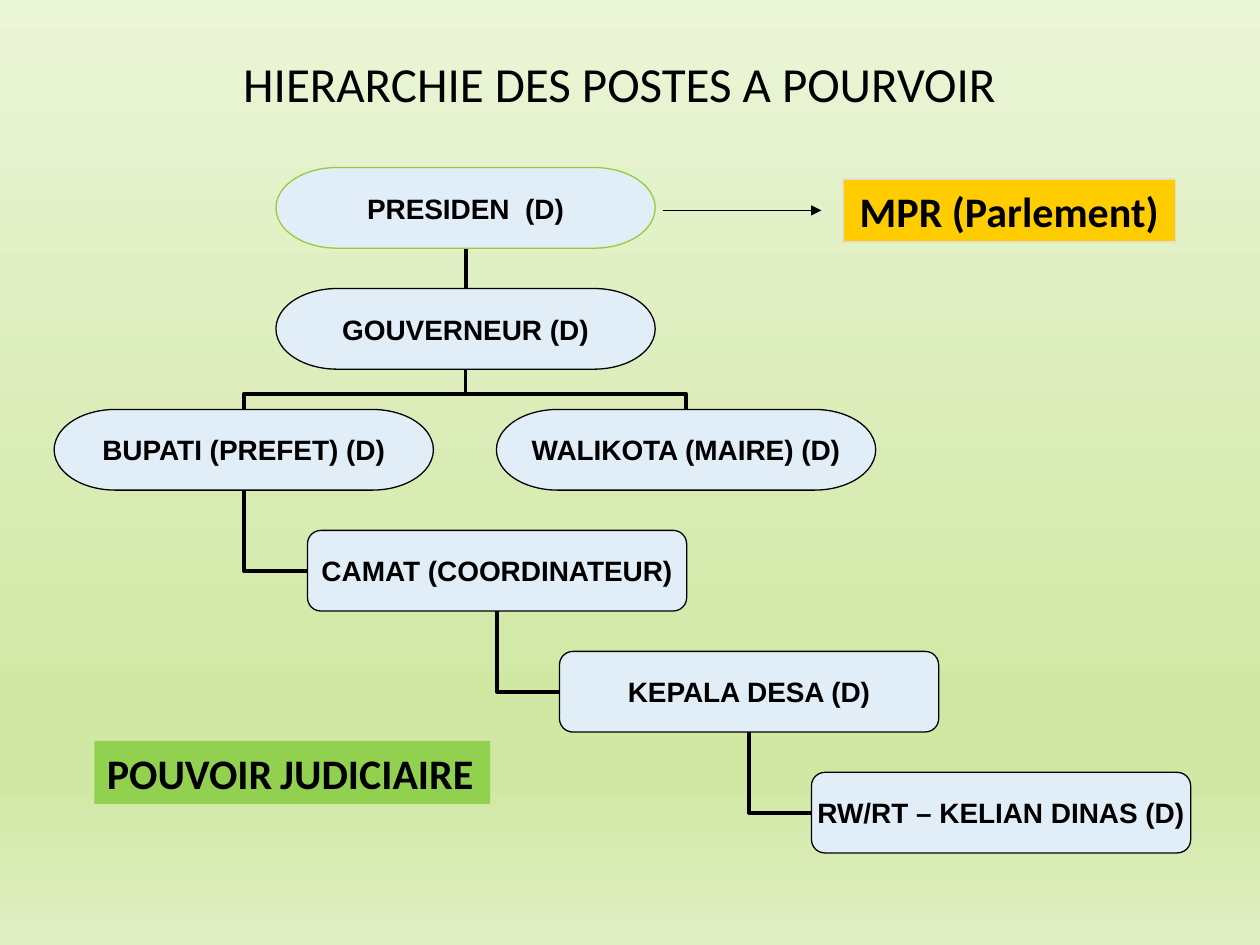
from copy import deepcopy

from pptx import Presentation
from pptx.dml.color import RGBColor
from pptx.enum.shapes import MSO_CONNECTOR, MSO_SHAPE
from pptx.enum.text import MSO_ANCHOR, MSO_AUTO_SIZE, PP_ALIGN
from pptx.oxml.ns import qn
from pptx.oxml.xmlchemy import OxmlElement
from pptx.util import Inches, Pt

STRAIGHT, ELBOW = MSO_CONNECTOR.STRAIGHT, MSO_CONNECTOR.ELBOW
OVAL, ROUNDED = MSO_SHAPE.FLOWCHART_TERMINATOR, MSO_SHAPE.ROUNDED_RECTANGLE
RECTANGLE = MSO_SHAPE.RECTANGLE
CENTER, LEFT = PP_ALIGN.CENTER, PP_ALIGN.LEFT
MIDDLE, TOP = MSO_ANCHOR.MIDDLE, MSO_ANCHOR.TOP
GROW = MSO_AUTO_SIZE.SHAPE_TO_FIT_TEXT

BLACK = "000000"
BOX_WIDTH, BOX_HEIGHT = 3.01, 0.64
FIRST_TOP, ROW_STEP = 1.33, 0.96


def write(shape, spans, font, bold, align, anchor):
    """Fill the first paragraph with (text, size) runs and return it."""
    frame = shape.text_frame
    frame.vertical_anchor = anchor
    para = frame.paragraphs[0]
    para.alignment = align
    for text, size in spans:
        span = para.add_run()
        span.text = text
        span.font.name = font
        span.font.size = Pt(size)
        span.font.bold = bold
        span.font.color.rgb = RGBColor.from_string(BLACK)
    return para


def draw_line(kind, start, end, width):
    """Add a black connector without shadow between two points in inches."""
    points = [Inches(value) for value in (*start, *end)]
    line = page.shapes.add_connector(kind, *points)
    line.line.color.rgb = RGBColor.from_string(BLACK)
    line.line.width = Pt(width)
    line.element.spPr.append(OxmlElement("a:effectLst"))
    return line


deck = Presentation()
deck.slide_width, deck.slide_height = Inches(10), Inches(7.5)
page = deck.slides.add_slide(deck.slide_layouts[6])

# Background gradient, from top to bottom
backdrop = page.background.fill
backdrop.gradient()
backdrop.gradient_angle = 270
stop_list = page.element.find(".//" + qn("a:gsLst"))
for stop in list(stop_list):
    stop_list.append(deepcopy(stop))
colors = [(0, "EBF5D7"), (0.74, "D1E8A5"), (0.83, "D1E8A5"), (1, "E0EFC3")]
for stop, (position, color) in zip(backdrop.gradient_stops, colors):
    stop.position = position
    stop.color.rgb = RGBColor.from_string(color)

# Title
title = page.shapes.add_textbox(Inches(0.5), Inches(0.3), Inches(8.83), Inches(0.77))
title.text_frame.word_wrap = True
para = write(title, [("HIERARCHIE DES POSTES A POURVOIR", 28)], "Calibri", False, CENTER, MIDDLE)
para.line_spacing = 0.9

# Parliament and judiciary labels
labels = [
    (6.69, 1.42, 2.64, "FFCC00", "E2DFCC", CENTER, True, [("MPR (Parlement)", 24)]),
    (0.75, 5.88, 3.14, "92D050", None, LEFT, False,
     [("POUVOIR", 24), (" ", 20), ("JUDICIAIRE", 24)]),
]
for left, top, width, fill, outline, align, wrap, spans in labels:
    label = page.shapes.add_shape(
        RECTANGLE, Inches(left), Inches(top), Inches(width), Inches(0.5))
    label.shadow.inherit = False
    label.fill.solid()
    label.fill.fore_color.rgb = RGBColor.from_string(fill)
    if outline:
        label.line.color.rgb = RGBColor.from_string(outline)
        label.line.width = Pt(1)
    else:
        label.line.fill.background()
    label.text_frame.word_wrap = wrap
    label.text_frame.auto_size = GROW
    write(label, spans, "Calibri", True, align, TOP)

arrow = draw_line(STRAIGHT, (5.26, 1.67), (6.52, 1.67), 0.75)
head = OxmlElement("a:tailEnd")
head.set("type", "triangle")
arrow.line._get_or_add_ln().append(head)

# Steps from a post down to the post on its lower right
for row, parent_left, child_left in [(5, 4.44, 6.44), (4, 2.44, 4.44), (3, 0.43, 2.44)]:
    child_middle = FIRST_TOP + row * ROW_STEP + BOX_HEIGHT / 2
    parent_bottom = FIRST_TOP + (row - 1) * ROW_STEP + BOX_HEIGHT
    parent_middle = parent_left + BOX_WIDTH / 2
    step = draw_line(ELBOW, (child_left, child_middle), (parent_middle, parent_bottom), 2.25)
    step.element.spPr.find(qn("a:prstGeom")).set("prst", "bentConnector2")

# Fork from the governor: each elbow is drawn upright, then turned about its centre
fork_top = FIRST_TOP + ROW_STEP + BOX_HEIGHT
half_drop = (ROW_STEP - BOX_HEIGHT) / 2
governor_middle = 2.19 + BOX_WIDTH / 2
for child_left, side, quarter_turns in [(3.94, 1, 1), (0.43, -1, 3)]:
    half_span = abs(child_left + BOX_WIDTH / 2 - governor_middle) / 2
    center_x = governor_middle + side * half_span
    center_y = fork_top + half_drop
    branch = draw_line(
        ELBOW,
        (center_x + side * half_drop, center_y - half_span),
        (center_x - side * half_drop, center_y + half_span), 2.25)
    branch.element.spPr.find(qn("a:xfrm")).set("rot", str(quarter_turns * 5400000))
    bend = OxmlElement("a:gd")
    bend.set("name", "adj1")
    bend.set("fmla", "val 39100")
    branch.element.spPr.find(qn("a:prstGeom")).get_or_add_avLst().append(bend)

trunk = draw_line(STRAIGHT, (governor_middle, 2.29), (governor_middle, 1.97), 2.25)

# Posts
posts = [
    ("PRESIDEN  (D)", OVAL, 2.19, 0, "99CB38"),
    ("GOUVERNEUR (D)", OVAL, 2.19, 1, BLACK),
    ("BUPATI (PREFET) (D)", OVAL, 0.43, 2, BLACK),
    ("WALIKOTA (MAIRE) (D)", OVAL, 3.94, 2, BLACK),
    ("CAMAT (COORDINATEUR)", ROUNDED, 2.44, 3, BLACK),
    ("KEPALA DESA (D)", ROUNDED, 4.44, 4, BLACK),
    ("RW/RT – KELIAN DINAS (D)", ROUNDED, 6.44, 5, BLACK),
]
boxes = []
for text, kind, left, row, outline in posts:
    box = page.shapes.add_shape(
        kind, Inches(left), Inches(FIRST_TOP + row * ROW_STEP),
        Inches(BOX_WIDTH), Inches(BOX_HEIGHT))
    box.shadow.inherit = False
    box.fill.solid()
    box.fill.fore_color.rgb = RGBColor.from_string("E1EDF7")
    box.line.color.rgb = RGBColor.from_string(outline)
    box.line.width = Pt(0.75)
    frame = box.text_frame
    frame.word_wrap = False
    frame.margin_left = frame.margin_right = frame.margin_top = frame.margin_bottom = 0
    write(box, [(text, 16)], "Arial", True, CENTER, MIDDLE)
    boxes.append(box)

president, governor = boxes[:2]
trunk.begin_connect(governor, 0)
trunk.end_connect(president, 2)

deck.save("out.pptx")
